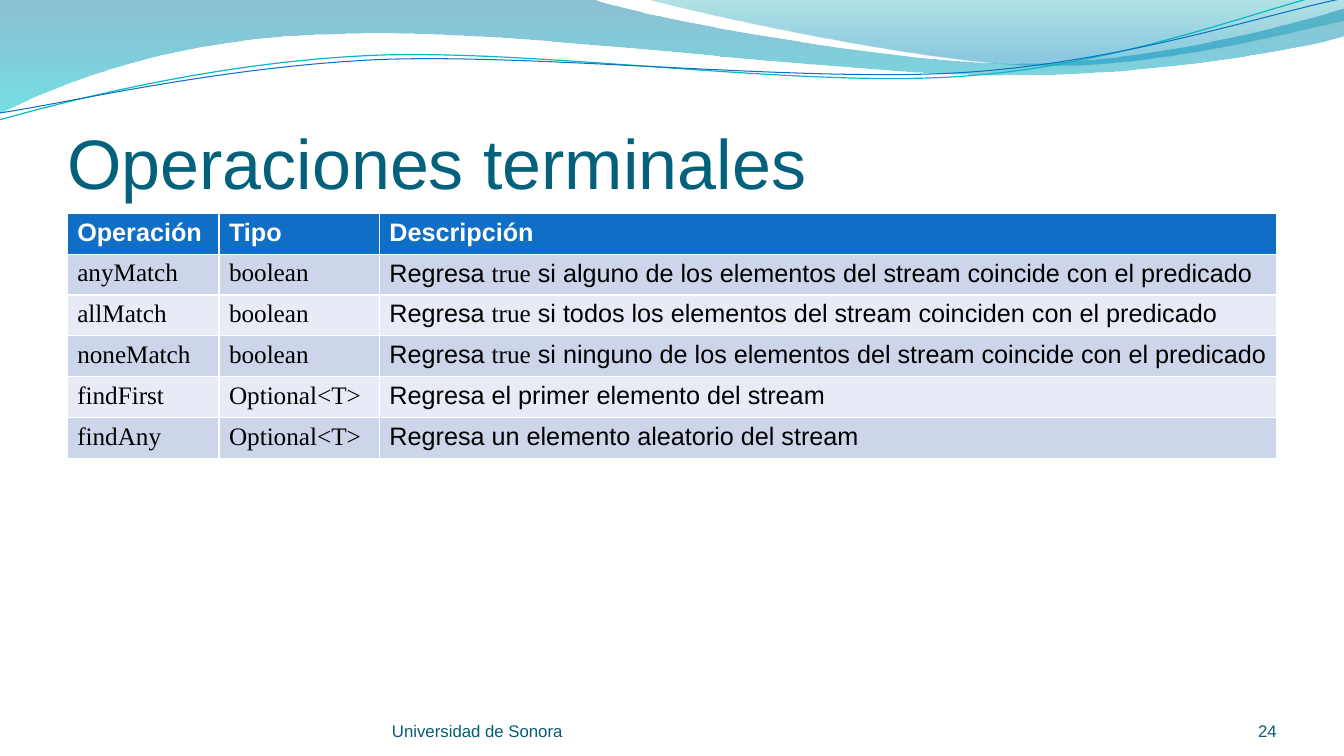
from lxml import etree
from pptx import Presentation
from pptx.dml.color import RGBColor
from pptx.enum.text import MSO_ANCHOR, MSO_AUTO_SIZE, PP_ALIGN
from pptx.oxml.ns import qn
from pptx.util import Pt

BOTTOM = MSO_ANCHOR.BOTTOM
NO_AUTOFIT = MSO_AUTO_SIZE.NONE
LEFT, RIGHT = PP_ALIGN.LEFT, PP_ALIGN.RIGHT

WHITE = RGBColor(0xFF, 0xFF, 0xFF)
BLACK = RGBColor(0, 0, 0)
TITLE_TEAL = RGBColor(0x04, 0x61, 0x7B)
FOOTER_TEAL = RGBColor(0x04, 0x5D, 0x75)
BLUE = RGBColor(0x0F, 0x6F, 0xC6)
TURQUOISE = RGBColor(0x0A, 0xB8, 0xBF)
BANDS = (RGBColor(0xCC, 0xD5, 0xEA), RGBColor(0xE7, 0xEB, 0xF5))

SANS, CODE = "Arial", "Times New Roman"
MARGIN, CONTENT_WIDTH = 48, 864
COLUMN_WIDTHS = (108.4, 114.6, 641)
ROW_HEIGHT = 29.2

HEADINGS = ("Operación", "Tipo", "Descripción")
# Words between backticks are set in the code font.
OPERATIONS = (
    ("`anyMatch`", "`boolean`",
     "Regresa `true` si alguno de los elementos del stream coincide con el predicado"),
    ("`allMatch`", "`boolean`",
     "Regresa `true` si todos los elementos del stream coinciden con el predicado"),
    ("`noneMatch`", "`boolean`",
     "Regresa `true` si ninguno de los elementos del stream coincide con el predicado"),
    ("`findFirst`", "`Optional<T>`", "Regresa el primer elemento del stream"),
    ("`findAny`", "`Optional<T>`", "Regresa un elemento aleatorio del stream"),
)

# Each path is a start point, then segments: one point is a line, three are a Bézier curve.
WAVES = (
    {"path": ((0, 0), [
        [(422.6, -0.7)],
        [(456.5, 12.2), (637.2, 45.4), (727.9, 45.4)],
        [(819.4, 45.4), (920.2, 18.7), (959.8, 6.5)],
        [(961.2, 25.9)],
        [(943.9, 31.7), (835.2, 54.7), (715.7, 54)],
        [(596.9, 54), (366.5, 20.2), (247, 24.5)],
        [(123.8, 25.9), (43.9, 59.8), (-0.7, 81.4)]]),
     "stops": ((0, RGBColor(0x00, 0x74, 0xA1), 45), (1, RGBColor(0x00, 0xC6, 0xCF), 55))},
    {"path": ((460.1, -0.7), [
        [(488.9, 7.9), (654.5, 44.6), (738, 46.8)],
        [(821.5, 49.7), (923, 23), (959.8, 15.1)],
        [(959.8, 0)]]),
     "stops": ((0, RGBColor(0x00, 0xA1, 0xA9), 30), (0.8, RGBColor(0x00, 0x8B, 0xBF), 45))},
)
STRANDS = (
    {"path": ((-0.7, 85.7), [
        [(46.1, 72.7), (151.9, 44.6), (265.7, 39.6)],
        [(379.4, 34.6), (568.8, 62.6), (684, 54.7)],
        [(799.2, 47.5), (901.4, 5.8), (958.3, -7.2)]]),
     "color": TURQUOISE, "width": 0.85},
    {"path": ((0, 80.6), [
        [(45.4, 74.2), (157, 47.5), (272.2, 42.5)],
        [(385.9, 38.2), (573.1, 59), (687.6, 51.8)],
        [(802.8, 44.6), (903.6, 10.1), (960.5, -1.4)]]),
     "color": BLUE, "width": 0.75},
)


def set_all(target, values):
    for name, value in values.items():
        setattr(target, name, value)


def add_span(para, text, font, size, color, bold=False):
    span = para.add_run()
    span.text = text
    set_all(span.font, {"name": font, "size": Pt(size), "bold": bold})
    span.font.color.rgb = color


def bend_lines(outline, segments):
    """Turn the three lines drawn for each curved segment into one Bézier curve."""
    lines = iter(list(outline.element.spPr.iter(qn("a:lnTo"))))
    for segment in segments:
        steps = [next(lines) for _ in segment]
        if len(steps) == 3:
            curve = etree.Element(qn("a:cubicBezTo"))
            steps[0].addprevious(curve)
            for step in steps:
                curve.append(step[0])
                step.getparent().remove(step)


def add_outline(page, start, segments, close):
    points = [start] + [point for segment in segments for point in segment]
    vertices = [(Pt(x), Pt(y)) for x, y in points]
    builder = page.shapes.build_freeform(*vertices[0])
    builder.add_line_segments(vertices[1:], close=close)
    outline = builder.convert_to_shape()
    bend_lines(outline, segments)
    outline.shadow.inherit = False
    return outline


def add_wave(page, path, stops):
    wave = add_outline(page, *path, close=True)
    wave.line.fill.background()
    wave.fill.gradient()
    wave.fill.gradient_angle = 270
    for stop, (position, color, _) in zip(wave.fill.gradient_stops, stops):
        stop.position = position
        stop.color.rgb = color
    colors = wave.element.spPr.iter(qn("a:srgbClr"))
    for color, (_, _, opacity) in zip(colors, stops):
        etree.SubElement(color, qn("a:alpha"), val=str(opacity * 1000))


def add_strand(page, path, color, width):
    strand = add_outline(page, *path, close=False)
    strand.fill.background()
    strand.line.color.rgb = color
    strand.line.width = Pt(width)


def format_title(page, text):
    title = page.shapes.title
    page.shapes.element.append(title.element)  # in front of the waves
    set_all(title, {"left": Pt(MARGIN), "top": Pt(55.4),
                    "width": Pt(CONTENT_WIDTH), "height": Pt(90)})
    set_all(title.text_frame, {
        "vertical_anchor": BOTTOM, "auto_size": NO_AUTOFIT, "word_wrap": True,
        "margin_left": 0, "margin_right": 0, "margin_top": Pt(3.6), "margin_bottom": 0})
    para = title.text_frame.paragraphs[0]
    para.alignment = LEFT
    add_span(para, text, SANS, 50, TITLE_TEAL)


def format_cell(cell, text, row):
    header = row == 0
    cell.fill.solid()
    cell.fill.fore_color.rgb = BLUE if header else BANDS[(row - 1) % 2]
    para = cell.text_frame.paragraphs[0]
    for index, part in enumerate(text.split("`")):
        if part:
            add_span(para, part, CODE if index % 2 else SANS, 18,
                     WHITE if header else BLACK, header)


def add_operations_table(page):
    """Add the table; its default style draws the white rules."""
    rows = (HEADINGS, *OPERATIONS)
    table = page.shapes.add_table(len(rows), len(HEADINGS), Pt(MARGIN), Pt(152.3),
                                  Pt(CONTENT_WIDTH), Pt(ROW_HEIGHT * len(rows))).table
    for column, width in zip(table.columns, COLUMN_WIDTHS):
        column.width = Pt(width)
    for row, texts in enumerate(rows):
        table.rows[row].height = Pt(ROW_HEIGHT)
        for column, text in enumerate(texts):
            format_cell(table.cell(row, column), text, row)


def add_footer(page, text, left, width, alignment):
    box = page.shapes.add_textbox(Pt(left), Pt(500.4), Pt(width), Pt(28.8))
    set_all(box.text_frame, {
        "vertical_anchor": BOTTOM, "word_wrap": True,
        "margin_left": 0, "margin_right": 0, "margin_top": 0, "margin_bottom": 0})
    para = box.text_frame.paragraphs[0]
    para.alignment = alignment
    add_span(para, text, SANS, 12, FOOTER_TEAL)


def main():
    deck = Presentation()
    set_all(deck, {"slide_width": Pt(960), "slide_height": Pt(540)})
    page = deck.slides.add_slide(deck.slide_layouts[5])
    for wave in WAVES:
        add_wave(page, **wave)
    for strand in STRANDS:
        add_strand(page, **strand)
    format_title(page, "Operaciones terminales")
    add_operations_table(page)
    add_footer(page, "Universidad de Sonora", 280, 352, LEFT)
    add_footer(page, "24", 832, 80, RIGHT)
    deck.save("out.pptx")


if __name__ == "__main__":
    main()
